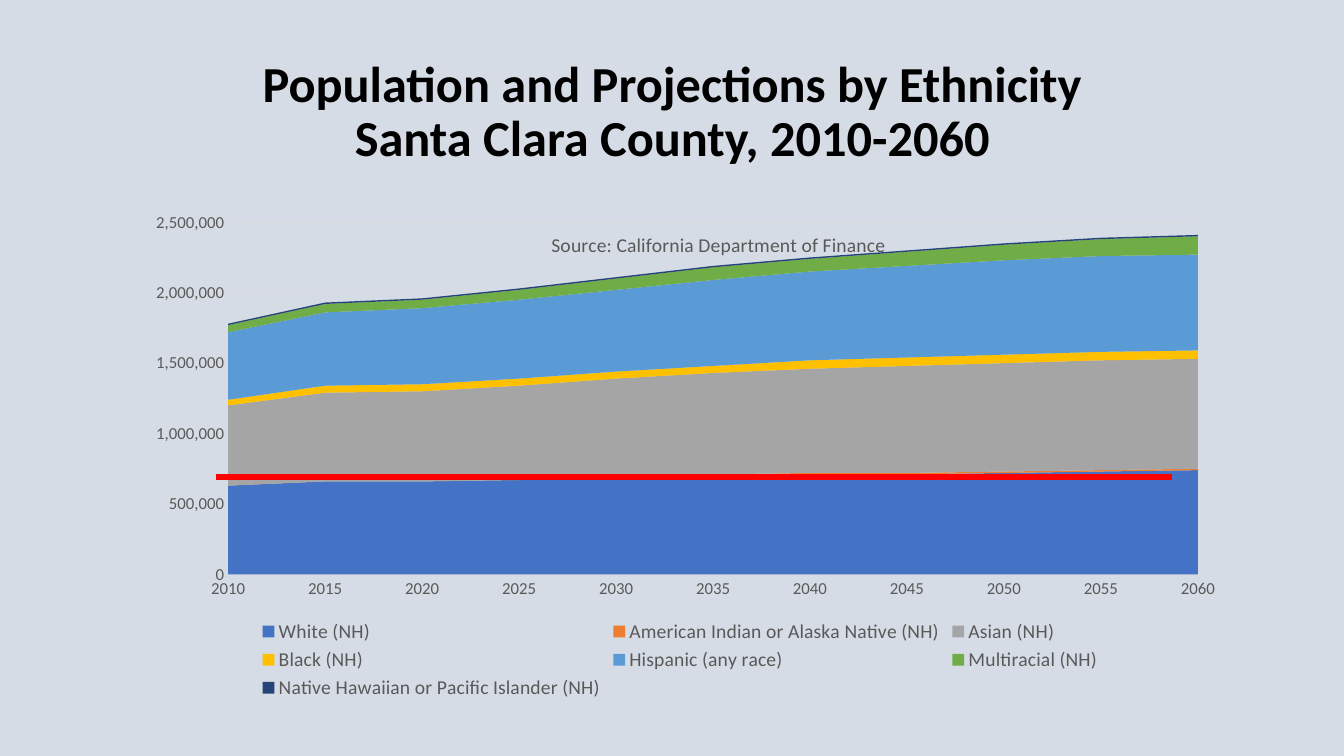
import pptx
import pptx.chart.data
import pptx.dml.color
import pptx.enum.chart
import pptx.enum.shapes
import pptx.enum.text
import pptx.oxml
import pptx.oxml.ns
import pptx.util

PX = 914400 / 100.8
COLORS = {"background": "D6DCE5", "title": "000000", "label": "595959",
          "rule": "D9D9D9", "marker": "FF0000"}
FONT = "Calibri"
YEARS = [str(year) for year in range(2010, 2061, 5)]
# Group name, fill, population in thousands for each year
GROUPS = [
    ("White (NH)", "4472C4", [630, 660, 660, 670, 690, 700, 710, 710, 720, 730, 740]),
    ("American Indian or Alaska Native (NH)", "ED7D31", [0] * 4 + [10] * 7),
    ("Asian (NH)", "A5A5A5", [570, 630, 640, 670, 690, 720, 740, 760, 770, 780, 780]),
    ("Black (NH)", "FFC000", [40] + [50] * 5 + [60] * 5),
    ("Hispanic (any race)", "5B9BD5", [480, 520, 540, 560, 580, 610, 630, 650, 670, 680, 680]),
    ("Multiracial (NH)", "70AD47", [50, 60, 60, 70, 80, 90, 90, 100, 110, 120, 130]),
    ("Native Hawaiian or Pacific Islander (NH)", "264478", [10] * 11),
]


def px(length):
    return pptx.util.Emu(round(length * PX))


def rgb(value):
    return pptx.dml.color.RGBColor.from_string(value)


def set_font(font, size, color, bold=False):
    font.name = FONT
    font.size = pptx.util.Pt(size)
    font.bold = bold
    font.color.rgb = rgb(color)


def set_line(line, color, width):
    line.color.rgb = rgb(color)
    line.width = pptx.util.Pt(width)


def set_layout(parent, position, **fractions):
    """Give a chart part a manual layout, in fractions of the chart."""
    for old in parent.findall(pptx.oxml.ns.qn("c:layout")):
        parent.remove(old)
    target = '<c:layoutTarget val="inner"/>' if "w" in fractions else ""
    modes = "".join(f'<c:{key}Mode val="edge"/>' for key in "xy")
    values = "".join(f'<c:{key} val="{value}"/>' for key, value in fractions.items())
    parent.insert(position, pptx.oxml.parse_xml(
        f'<c:layout {pptx.oxml.ns.nsdecls("c")}><c:manualLayout>'
        f'{target}{modes}{values}</c:manualLayout></c:layout>'))


def add_title(slide, left, top, width, height):
    box = slide.shapes.add_textbox(px(left), px(top), px(width), px(height))
    frame = box.text_frame
    frame.word_wrap = True
    frame.vertical_anchor = pptx.enum.text.MSO_ANCHOR.MIDDLE
    heading = frame.paragraphs[0]
    heading.text = "Population and Projections by Ethnicity\vSanta Clara County, 2010-2060"
    heading.alignment = pptx.enum.text.PP_ALIGN.CENTER
    heading.line_spacing = 0.9
    set_font(heading.font, 36, COLORS["title"], bold=True)


def add_population_chart(slide, left, top, width, height):
    data = pptx.chart.data.CategoryChartData(number_format="#,##0")
    data.categories = YEARS
    for name, _, thousands in GROUPS:
        data.add_series(name, [value * 1000 for value in thousands])
    chart = slide.shapes.add_chart(
        pptx.enum.chart.XL_CHART_TYPE.AREA_STACKED,
        px(left), px(top), px(width), px(height), data).chart
    set_font(chart.font, 10, COLORS["title"])
    plot = chart.plots[0]
    plot.vary_by_categories = False
    for series, (_, color, _) in zip(plot.series, GROUPS):
        series.format.fill.solid()
        series.format.fill.fore_color.rgb = rgb(color)
        series.format.line.fill.background()

    # Source note inside the plot
    chart.has_title = True
    note = chart.chart_title.text_frame.paragraphs[0]
    note.text = "Source: California Department of Finance"
    set_font(note.font, 14, COLORS["label"])
    set_layout(chart.chart_title.element
               if hasattr(chart.chart_title, "element") else chart.chart_title._element,
               1, x=0.38, y=0.08)

    # Axes
    years, people = chart.category_axis, chart.value_axis
    for axis in (years, people):
        axis.major_tick_mark = pptx.enum.chart.XL_TICK_MARK.NONE
        axis.minor_tick_mark = pptx.enum.chart.XL_TICK_MARK.NONE
        set_font(axis.tick_labels.font, 12, COLORS["label"])
    years.has_major_gridlines = False
    set_line(years.format.line, COLORS["rule"], 0.75)
    people.minimum_scale = 0
    people.maximum_scale = 2500000
    people.major_unit = 500000
    people.tick_labels.number_format = "#,##0"
    people.tick_labels.number_format_is_linked = False
    people.has_major_gridlines = True
    set_line(people.major_gridlines.format.line, COLORS["rule"], 0.75)
    people.format.line.fill.background()
    for crossing in chart.element.xpath(".//c:valAx/c:crossBetween"):
        crossing.set("val", "midCat")

    # Legend and plot position
    chart.has_legend = True
    chart.legend.position = pptx.enum.chart.XL_LEGEND_POSITION.BOTTOM
    chart.legend.include_in_layout = False
    set_font(chart.legend.font, 14, COLORS["label"])
    set_layout(chart.element.xpath(".//c:plotArea")[0], 0,
               x=0.09, y=0.07, w=0.88, h=0.68)


def add_marker_line(slide, left, top, width):
    marker = slide.shapes.add_connector(
        pptx.enum.shapes.MSO_CONNECTOR.STRAIGHT,
        px(left), px(top), px(left + width), px(top))
    set_line(marker.line, COLORS["marker"], 4)
    marker.element.spPr.append(pptx.oxml.parse_xml(
        f'<a:effectLst {pptx.oxml.ns.nsdecls("a")}/>'))


def main():
    deck = pptx.Presentation()
    deck.slide_width, deck.slide_height = px(1344), px(756)
    slide = deck.slides.add_slide(deck.slide_layouts[6])
    slide.background.fill.solid()
    slide.background.fill.fore_color.rgb = rgb(COLORS["background"])
    add_title(slide, 93, 40, 1159, 146)
    add_population_chart(slide, 129, 186, 1102, 518)
    add_marker_line(slide, 216, 477, 956)
    deck.save("out.pptx")


if __name__ == "__main__":
    main()
